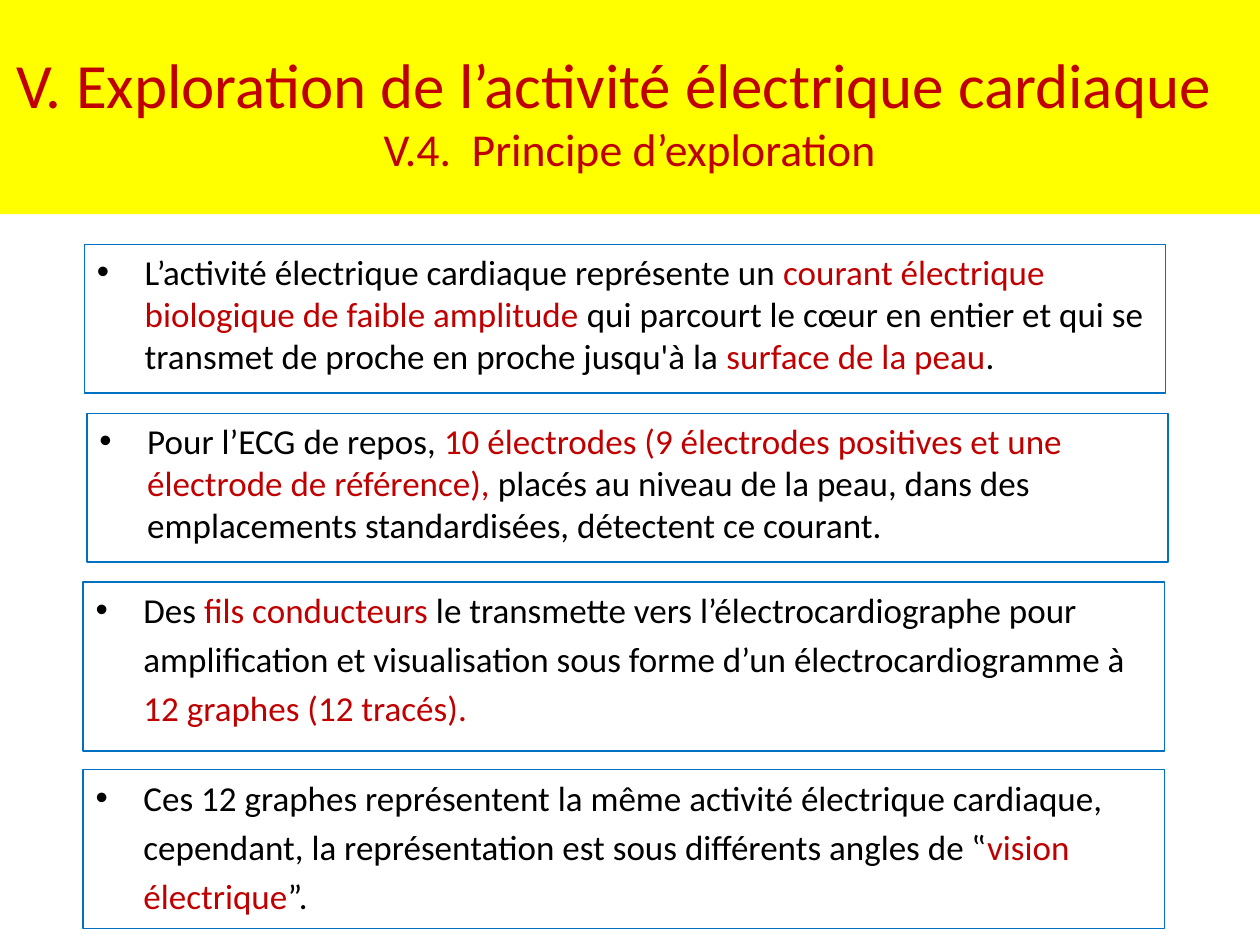
import pptx
import pptx.util
import pptx.dml.color
import pptx.enum.shapes
import pptx.enum.text
from dataclasses import dataclass
from lxml import etree
from pptx.util import Inches, Pt

RGB = pptx.dml.color.RGBColor.from_string


@dataclass(frozen=True)
class Theme:
    font: str = "Calibri"
    band: str = "FFFF00"
    edge: str = "0070C0"
    ink: str = "000000"
    mark: str = "C00000"
    head: float = 36
    sub: float = 26.1
    body: float = 20
    gap: float = 4


THEME = Theme()
INDENT = 0.38
WIDTH = 8.58

NOTES = [
    (0.67, 1.94, 1.18, [
        "L’activité électrique cardiaque représente un |courant électrique "
        "biologique de faible amplitude |qui parcourt le cœur en entier et qui se "
        "transmet de proche en proche jusqu'à la |surface de la peau|.",
    ]),
    (0.69, 3.28, 1.18, [
        "Pour l’ECG de repos, |10 électrodes (9 électrodes positives et une "
        "électrode de référence), |placés au niveau de la peau, dans des "
        "emplacements standardisées, détectent ce courant.",
    ]),
    (0.66, 4.62, 1.34, [
        "Des |fils conducteurs |le transmette vers l’électrocardiographe pour",
        "amplification et visualisation sous forme d’un électrocardiogramme à",
        "|12 graphes (12 tracés).",
    ]),
    (0.66, 6.11, 1.26, [
        "Ces 12 graphes représentent la même activité électrique cardiaque,",
        "cependant, la représentation est sous différents angles de ‟|vision",
        "|électrique|”.",
    ]),
]


def add_box(slide, left, top, width, height):
    box = slide.shapes.add_shape(
        pptx.enum.shapes.MSO_SHAPE.RECTANGLE,
        Inches(left), Inches(top), Inches(width), Inches(height))
    box.shadow.inherit = False
    box.text_frame.word_wrap = True
    return box


def get_para(frame, index):
    return frame.add_paragraph() if index else frame.paragraphs[0]


def set_font(para, size):
    para.font.name = THEME.font
    para.font.size = Pt(size)


def set_indent(para, left, bullet=False):
    props = para._p.get_or_add_pPr()
    props.set("marL", str(Inches(left)))
    if bullet:
        props.set("indent", str(-Inches(left)))
        space = pptx.oxml.ns.qn
        etree.SubElement(props, space("a:buFont")).set("typeface", "Arial")
        etree.SubElement(props, space("a:buChar")).set("char", "•")


def add_title(slide):
    box = add_box(slide, 0, 0, 10, 1.7)
    box.fill.solid()
    box.fill.fore_color.rgb = RGB(THEME.band)
    box.line.fill.background()
    frame = box.text_frame
    frame.vertical_anchor = pptx.enum.text.MSO_ANCHOR.MIDDLE
    frame.margin_top = Inches(0.11)
    frame.margin_right = Inches(0.35)
    lines = [
        ("V. Exploration de l’activité électrique cardiaque", THEME.head, 0),
        ("V.4.  Principe d’exploration", THEME.sub, 0.25),
    ]
    for index, (text, size, left) in enumerate(lines):
        para = get_para(frame, index)
        para.text = text
        para.alignment = pptx.enum.text.PP_ALIGN.CENTER
        set_indent(para, left)
        set_font(para, size)
        para.font.color.rgb = RGB(THEME.mark)


def add_note(slide, left, top, height, lines):
    box = add_box(slide, left, top, WIDTH, height)
    box.fill.background()
    box.line.color.rgb = RGB(THEME.edge)
    box.line.width = Pt(0.75)
    frame = box.text_frame
    frame.vertical_anchor = pptx.enum.text.MSO_ANCHOR.TOP
    for index, line in enumerate(lines):
        para = get_para(frame, index)
        para.alignment = pptx.enum.text.PP_ALIGN.LEFT
        para.space_before = Pt(THEME.gap if index else 0)
        set_indent(para, INDENT, bullet=index == 0)
        set_font(para, THEME.body)
        for turn, text in enumerate(line.split("|")):
            if text:
                run = para.add_run()
                run.text = text
                run.font.color.rgb = RGB(THEME.mark if turn % 2 else THEME.ink)


def main():
    deck = pptx.Presentation()
    deck.slide_width = Inches(10)
    deck.slide_height = Inches(7.5)
    slide = deck.slides.add_slide(deck.slide_layouts[6])
    add_title(slide)
    for note in NOTES:
        add_note(slide, *note)
    deck.save("out.pptx")


if __name__ == "__main__":
    main()
